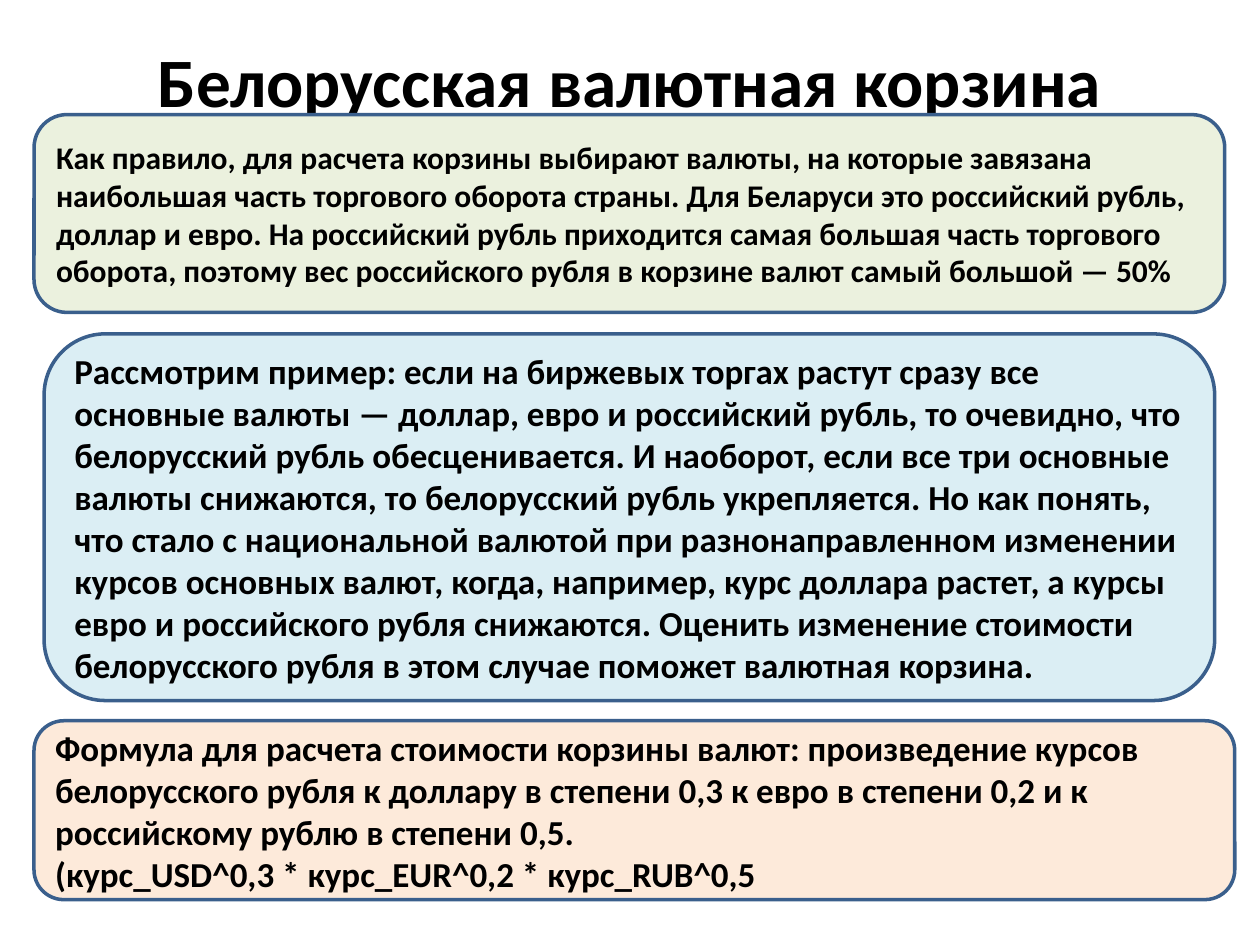
from pptx import Presentation
from pptx.dml.color import RGBColor
from pptx.enum.shapes import MSO_SHAPE
from pptx.enum.text import MSO_ANCHOR, PP_ALIGN
from pptx.util import Inches, Pt

ROUNDED = MSO_SHAPE.ROUNDED_RECTANGLE
MIDDLE = MSO_ANCHOR.MIDDLE
LEFT = PP_ALIGN.LEFT
CENTER = PP_ALIGN.CENTER


def color(value):
    return RGBColor.from_string(value)


def write(shape, lines, size, alignment):
    frame = shape.text_frame
    frame.word_wrap = True
    frame.vertical_anchor = MIDDLE
    frame.text = "\n".join(lines)
    for paragraph in frame.paragraphs:
        paragraph.alignment = alignment
        paragraph.font.name = "Calibri"
        paragraph.font.size = Pt(size)
        paragraph.font.bold = True
        paragraph.font.color.rgb = color("000000")


presentation = Presentation()
presentation.slide_width = Inches(10)
presentation.slide_height = Inches(7.5)
slide = presentation.slides.add_slide(presentation.slide_layouts[6])

title = slide.shapes.add_textbox(Inches(0.5), Inches(0.33), Inches(9), Inches(0.61))
write(title, ["Белорусская валютная корзина"], 39.6, CENTER)

panels = [
    (0.27, 0.91, 9.45, 1.57, "EBF1DE", 18, [
        "Как правило, для расчета корзины выбирают валюты, на которые завязана "
        "наибольшая часть торгового оборота страны. Для Беларуси это российский рубль, "
        "доллар и евро. На российский рубль приходится самая большая часть торгового "
        "оборота, поэтому вес российского рубля в корзине валют самый большой — 50%",
    ]),
    (0.35, 2.65, 9.29, 2.91, "DBEEF4", 20, [
        "Рассмотрим пример: если на биржевых торгах растут сразу все "
        "основные валюты — доллар, евро и российский рубль, то очевидно, что "
        "белорусский рубль обесценивается. И наоборот, если все три основные "
        "валюты снижаются, то белорусский рубль укрепляется. Но как понять, "
        "что стало с национальной валютой при разнонаправленном изменении "
        "курсов основных валют, когда, например, курс доллара растет, а курсы "
        "евро и российского рубля снижаются. Оценить изменение стоимости "
        "белорусского рубля в этом случае поможет валютная корзина.",
    ]),
    (0.27, 5.72, 9.53, 1.42, "FDEADA", 20, [
        "Формула для расчета стоимости корзины валют: произведение курсов "
        "белорусского рубля к доллару в степени 0,3 к евро в степени 0,2 и к "
        "российскому рублю в степени 0,5.",
        "(курс_USD^0,3 * курс_EUR^0,2 * курс_RUB^0,5",
    ]),
]

for left, top, width, height, fill, size, lines in panels:
    panel = slide.shapes.add_shape(
        ROUNDED, Inches(left), Inches(top), Inches(width), Inches(height)
    )
    panel.shadow.inherit = False
    panel.fill.solid()
    panel.fill.fore_color.rgb = color(fill)
    panel.line.color.rgb = color("3A5F8C")
    panel.line.width = Pt(2)
    write(panel, lines, size, LEFT)

presentation.save("out.pptx")
